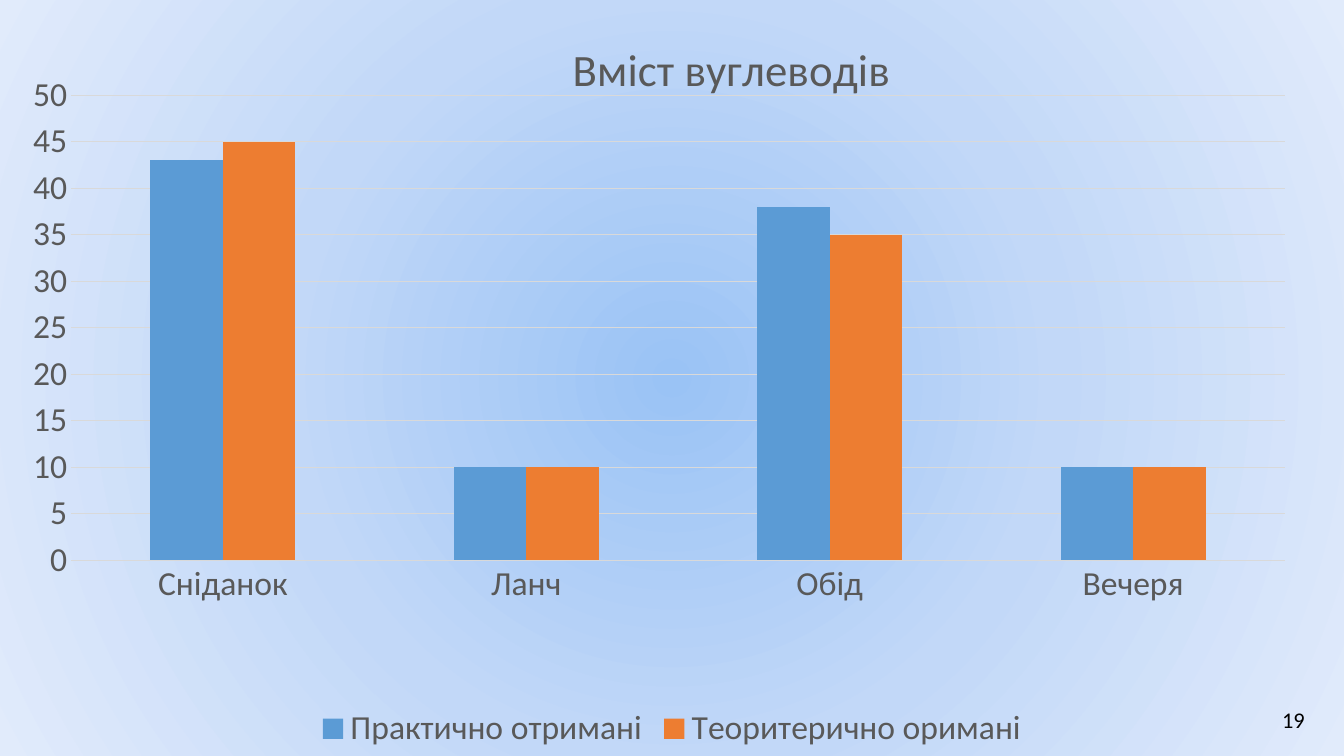
from dataclasses import dataclass

from lxml.etree import _Element
from pptx import Presentation
from pptx.chart.axis import _BaseAxis
from pptx.chart.chart import Chart
from pptx.chart.data import CategoryChartData
from pptx.dml.color import RGBColor
from pptx.enum.chart import XL_CHART_TYPE, XL_LEGEND_POSITION, XL_TICK_MARK
from pptx.enum.text import MSO_ANCHOR, PP_ALIGN
from pptx.oxml import parse_xml
from pptx.oxml.ns import nsdecls, qn
from pptx.slide import Slide
from pptx.text.text import Font, TextFrame
from pptx.util import Pt

SLIDE_WIDTH, SLIDE_HEIGHT = Pt(960), Pt(540)


@dataclass(frozen=True)
class Theme:
    font: str = "Calibri"
    label: str = "595959"
    grid: str = "D9D9D9"
    number: str = "000000"
    practical: str = "5B9BD5"
    theoretical: str = "ED7D31"
    glow: tuple[str, ...] = ("9AC3F5", "C2D8F8", "E1EBFB")
    title_size: int = 32
    label_size: int = 24
    number_size: int = 16


@dataclass(frozen=True)
class Intake:
    name: str
    grams: tuple[int, ...]
    color: str


THEME = Theme()
MEALS = ("Сніданок", "Ланч", "Обід", "Вечеря")
INTAKES = (
    Intake("Практично отримані", (43, 10, 38, 10), THEME.practical),
    Intake("Теоритерично оримані", (45, 10, 35, 10), THEME.theoretical),
)


def style_font(font: Font, size: int, color: str) -> None:
    font.name = THEME.font
    font.size = Pt(size)
    font.bold = False
    font.color.rgb = RGBColor.from_string(color)


def write(frame: TextFrame, text: str, *, size: int, color: str,
          align: PP_ALIGN = PP_ALIGN.CENTER) -> None:
    paragraph = frame.paragraphs[0]
    paragraph.alignment = align
    run = paragraph.add_run()
    run.text = text
    style_font(run.font, size, color)


def set_layout(part: _Element, index: int, target: str = "", **place: float) -> None:
    """Place a chart part by fractions of the chart's size."""
    old = part.find(qn("c:layout"))
    if old is not None:
        part.remove(old)
    inner = f'<c:layoutTarget val="{target}"/>' if target else ""
    modes = "".join(f'<c:{axis}Mode val="edge"/>' for axis in "xy")
    values = "".join(f'<c:{key} val="{value}"/>' for key, value in place.items())
    part.insert(index, parse_xml(
        f'<c:layout {nsdecls("c")}><c:manualLayout>{inner}{modes}{values}'
        "</c:manualLayout></c:layout>"))


def fill_with_glow(chart: Chart) -> None:
    """Give the chart area a circular gradient from its centre."""
    last = len(THEME.glow) - 1
    stops = "".join(
        f'<a:gs pos="{100000 * i // last}"><a:srgbClr val="{color}"/></a:gs>'
        for i, color in enumerate(THEME.glow))
    area = parse_xml(
        f'<c:spPr {nsdecls("c", "a")}><a:gradFill><a:gsLst>{stops}</a:gsLst>'
        '<a:path path="circle"><a:fillToRect l="50000" t="50000" r="50000" b="50000"/>'
        "</a:path></a:gradFill><a:ln><a:noFill/></a:ln></c:spPr>")
    chart._chartSpace.find(qn("c:chart")).addnext(area)


def style_axis(axis: _BaseAxis) -> None:
    axis.major_tick_mark = axis.minor_tick_mark = XL_TICK_MARK.NONE
    style_font(axis.tick_labels.font, THEME.label_size, THEME.label)


def add_carbohydrate_chart(slide: Slide) -> None:
    data = CategoryChartData()
    data.categories = MEALS
    for intake in INTAKES:
        data.add_series(intake.name, intake.grams)
    chart = slide.shapes.add_chart(
        XL_CHART_TYPE.COLUMN_CLUSTERED, 0, 0, SLIDE_WIDTH, SLIDE_HEIGHT, data).chart
    style_font(chart.font, THEME.label_size, THEME.label)
    fill_with_glow(chart)

    chart.has_title = True
    title = chart.chart_title
    write(title.text_frame, "Вміст вуглеводів", size=THEME.title_size, color=THEME.label)
    title.include_in_layout = False
    set_layout(title._element, 1, x=0.42, y=0.04)

    plot_area = chart._chartSpace.find(qn("c:chart")).find(qn("c:plotArea"))
    set_layout(plot_area, 0, "inner", x=0.053, y=0.126, w=0.903, h=0.615)

    columns = chart.plots[0]
    columns.gap_width, columns.overlap = 219, 0
    columns.vary_by_categories = False
    for series, intake in zip(columns.series, INTAKES):
        series.format.fill.solid()
        series.format.fill.fore_color.rgb = RGBColor.from_string(intake.color)

    meals, grams = chart.category_axis, chart.value_axis
    for axis in (meals, grams):
        style_axis(axis)
    grams.minimum_scale, grams.maximum_scale, grams.major_unit = 0, 50, 5
    grams.has_major_gridlines = True
    grams.format.line.fill.background()
    for line in (meals.format.line, grams.major_gridlines.format.line):
        line.width = Pt(0.75)
        line.color.rgb = RGBColor.from_string(THEME.grid)

    chart.has_legend = True
    chart.legend.position = XL_LEGEND_POSITION.BOTTOM
    chart.legend.include_in_layout = False
    style_font(chart.legend.font, THEME.label_size, THEME.label)


def add_page_number(slide: Slide, number: str) -> None:
    frame = slide.shapes.add_textbox(Pt(723), Pt(499.5), Pt(216), Pt(28.8)).text_frame
    frame.word_wrap = True
    frame.vertical_anchor = MSO_ANCHOR.MIDDLE
    write(frame, number, size=THEME.number_size, color=THEME.number, align=PP_ALIGN.RIGHT)


def main() -> None:
    deck = Presentation()
    deck.slide_width, deck.slide_height = SLIDE_WIDTH, SLIDE_HEIGHT
    slide = deck.slides.add_slide(deck.slide_layouts[6])
    add_carbohydrate_chart(slide)
    add_page_number(slide, "19")
    deck.save("out.pptx")


if __name__ == "__main__":
    main()
